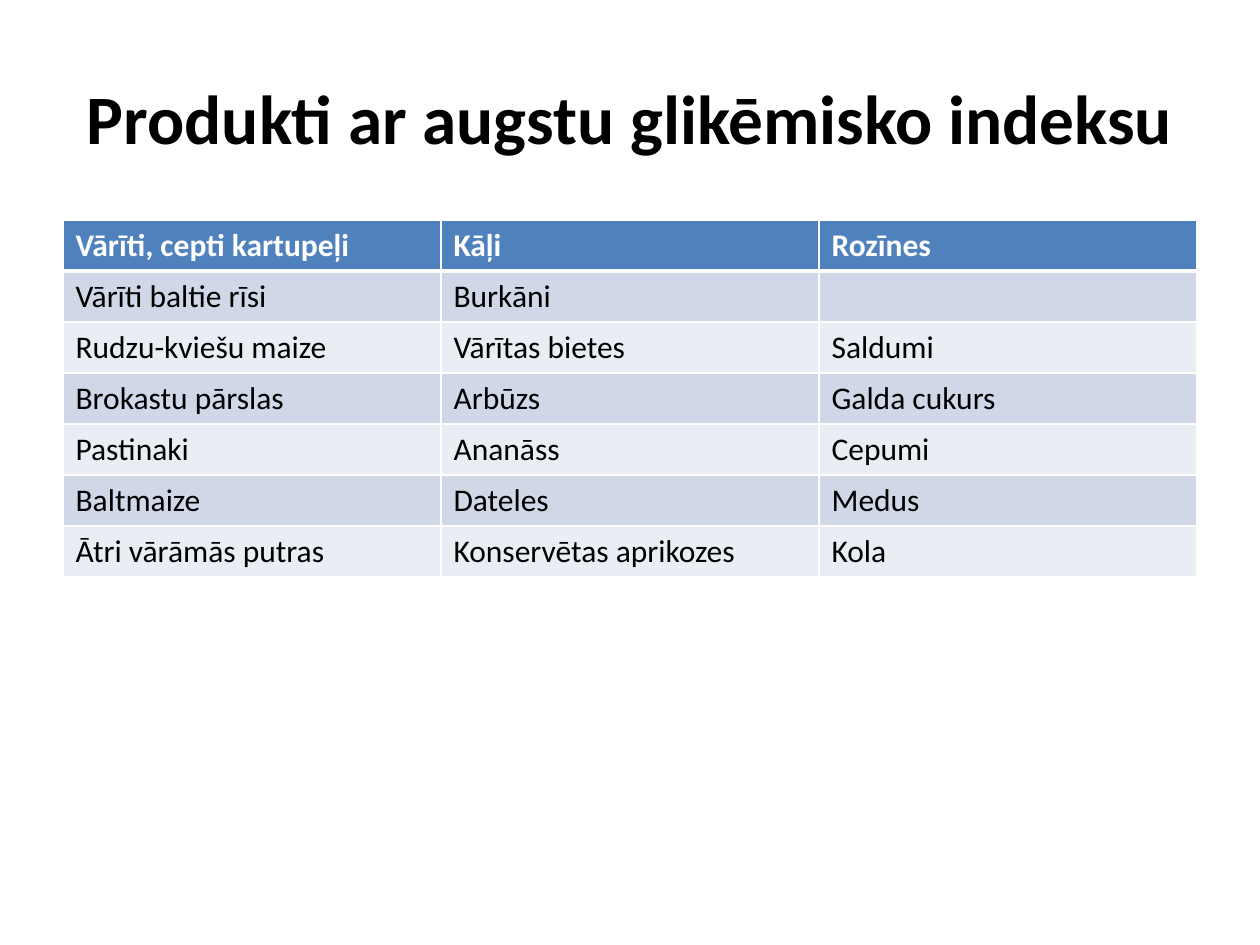
from lxml import etree
from pptx import Presentation
from pptx.dml.color import RGBColor
from pptx.enum.text import MSO_ANCHOR, PP_ALIGN
from pptx.oxml.ns import qn
from pptx.util import Emu, Pt

MIDDLE = MSO_ANCHOR.MIDDLE
CENTER, LEFT = PP_ALIGN.CENTER, PP_ALIGN.LEFT

# Content
TITLE = "Produkti ar augstu glikēmisko indeksu"
ROWS = [
    ("Vārīti, cepti kartupeļi", "Kāļi", "Rozīnes"),
    ("Vārīti baltie rīsi", "Burkāni", ""),
    ("Rudzu-kviešu maize", "Vārītas bietes", "Saldumi"),
    ("Brokastu pārslas", "Arbūzs", "Galda cukurs"),
    ("Pastinaki", "Ananāss", "Cepumi"),
    ("Baltmaize", "Dateles", "Medus"),
    ("Ātri vārāmās putras", "Konservētas aprikozes", "Kola"),
]

# Format
COLORS = {"text": "000000", "white": "FFFFFF", "header": "4F81BD",
          "odd": "D0D8E8", "even": "E9EDF4"}
TITLE_FONT = {"name": "Calibri", "size": Pt(39.6), "bold": True}
HEADER_FONT = {"name": "Calibri", "size": Pt(18), "bold": True}
BODY_FONT = {"name": "Calibri", "size": Pt(18), "bold": False}

# Layout in px
SCALE = 914400 / 126
SLIDE = (1260, 945)
TITLE_BOX = (63, 38, 1134, 157)
TABLE_LEFT, TABLE_TOP = 63, 220
COLUMN_WIDTH, ROW_HEIGHT = 378, 51
THIN, THICK = 1, 3


def px(value):
    return Emu(round(value * SCALE))


def write(frame, text, font, color, align):
    para = frame.paragraphs[0]
    para.alignment = align
    span = para.add_run()
    span.text = text
    for name, value in font.items():
        setattr(span.font, name, value)
    span.font.color.rgb = RGBColor.from_string(COLORS[color])


def add_borders(cell, top, bottom):
    properties = cell._tc.get_or_add_tcPr()
    for side, width in (("L", THIN), ("R", THIN), ("T", top), ("B", bottom)):
        line = etree.SubElement(properties, qn(f"a:ln{side}"), w=str(Pt(width)))
        fill = etree.SubElement(line, qn("a:solidFill"))
        etree.SubElement(fill, qn("a:srgbClr"), val=COLORS["white"])


deck = Presentation()
deck.slide_width, deck.slide_height = map(px, SLIDE)
page = deck.slides.add_slide(deck.slide_layouts[6])

# Title
box = page.shapes.add_textbox(*map(px, TITLE_BOX))
box.text_frame.word_wrap = True
box.text_frame.vertical_anchor = MIDDLE
write(box.text_frame, TITLE, TITLE_FONT, "text", CENTER)

# Product table
row_count, column_count = len(ROWS), len(ROWS[0])
table = page.shapes.add_table(
    row_count, column_count, px(TABLE_LEFT), px(TABLE_TOP),
    px(COLUMN_WIDTH * column_count), px(ROW_HEIGHT * row_count)).table
for column in table.columns:
    column.width = px(COLUMN_WIDTH)

for r, row in enumerate(ROWS):
    table.rows[r].height = px(ROW_HEIGHT)
    is_header = r == 0
    fill_color = "header" if is_header else "odd" if r % 2 else "even"
    font, color = (HEADER_FONT, "white") if is_header else (BODY_FONT, "text")
    for c, text in enumerate(row):
        cell = table.cell(r, c)
        cell.vertical_anchor = MIDDLE
        add_borders(cell, THICK if r == 1 else THIN, THICK if is_header else THIN)
        cell.fill.solid()
        cell.fill.fore_color.rgb = RGBColor.from_string(COLORS[fill_color])
        if text:
            write(cell.text_frame, text, font, color, LEFT)

deck.save("out.pptx")
